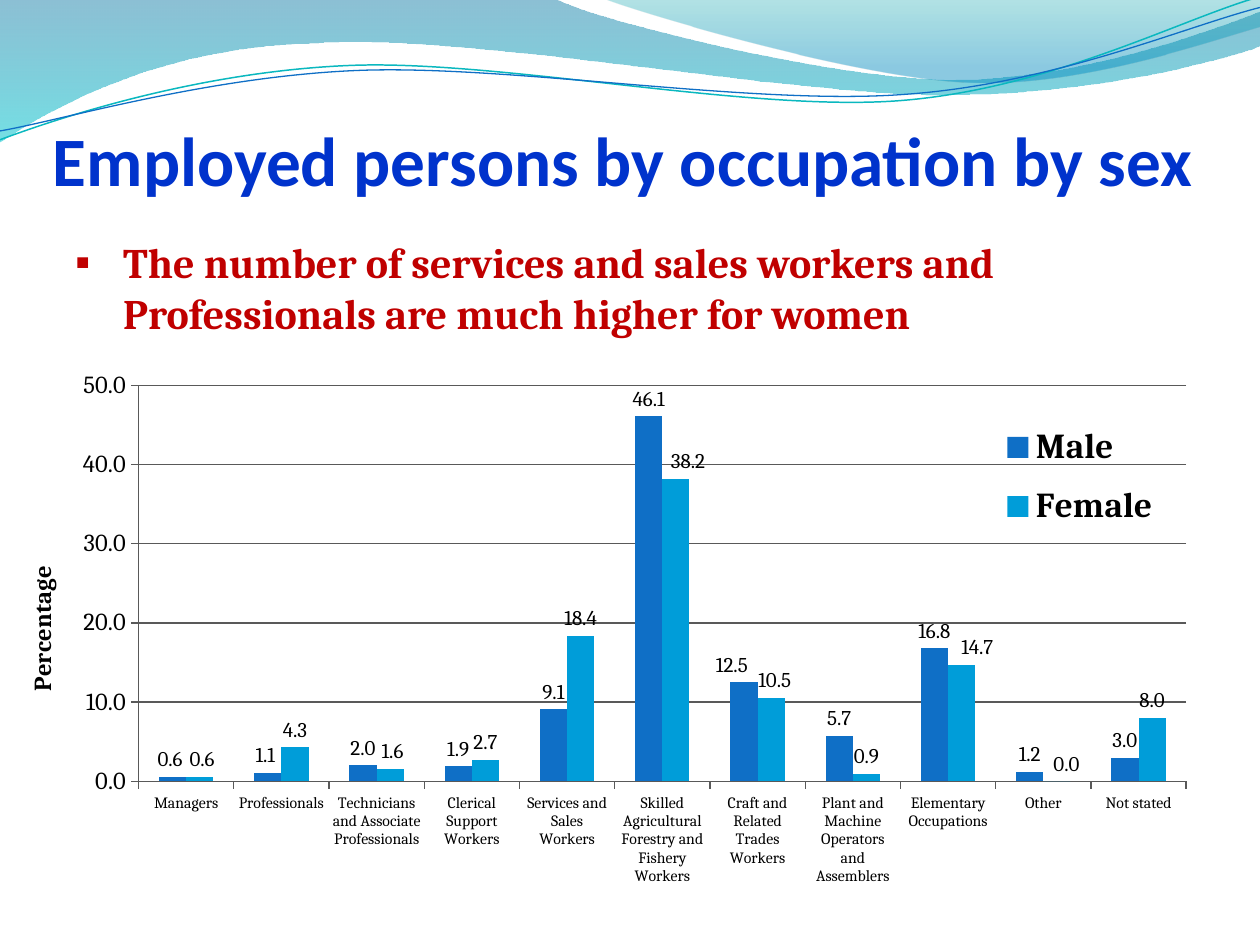
import math
from lxml import etree
from pptx import Presentation, util as u
from pptx.chart.data import CategoryChartData
from pptx.dml.color import RGBColor
from pptx.enum import chart as ch, text as tx
from pptx.oxml import ns

WAVES = [
    dict(start=(0, 0), segs=[
        (4.4, -0.01), (4.76, 0.17, 6.64, 0.63, 7.58, 0.63),
        (8.53, 0.63, 9.58, 0.26, 10, 0.09), (10.01, 0.36),
        (9.83, 0.44, 8.7, 0.76, 7.46, 0.75), (6.22, 0.75, 3.82, 0.28, 2.57, 0.34),
        (1.29, 0.36, 0.46, 0.83, -0.01, 1.13)],
        fill=[(0, "0074A1", 45), (1, "00C6CF", 55)]),
    dict(start=(4.79, -0.01), segs=[
        (5.09, 0.11, 6.82, 0.62, 7.69, 0.65), (8.56, 0.69, 9.61, 0.32, 10, 0.21),
        (10, 0)],
        fill=[(0, "00A1A9", 30), (0.8, "008BBF", 45)]),
    dict(start=(0, 1.11), segs=[
        (0.48, 0.93, 1.58, 0.57, 2.77, 0.52), (3.95, 0.47, 5.93, 0.89, 7.13, 0.8),
        (8.33, 0.71, 9.38, 0.15, 9.98, -0.02)],
        line=("0AB8BF", 0.85), turn=-2.7),
    dict(start=(0, 1.04), segs=[
        (0.47, 0.96, 1.64, 0.61, 2.83, 0.56), (4.03, 0.51, 5.97, 0.84, 7.17, 0.75),
        (8.36, 0.67, 9.41, 0.21, 10, 0.06)],
        line=("0F6FC6", 0.75), turn=-2.7),
]
TITLE = "Employed persons by occupation by sex"
POINT = "The number of services and sales workers and Professionals are much higher for women"
ROWS = [
    ("Managers", 0.6, 0.6),
    ("Professionals", 1.1, 4.3),
    ("Technicians and Associate Professionals", 2.0, 1.6),
    ("Clerical Support Workers", 1.9, 2.7),
    ("Services and Sales Workers", 9.1, 18.4),
    ("Skilled Agricultural Forestry and Fishery Workers", 46.1, 38.2),
    ("Craft and Related Trades Workers", 12.5, 10.5),
    ("Plant and Machine Operators and Assemblers", 5.7, 0.9),
    ("Elementary Occupations", 16.8, 14.7),
    ("Other", 1.2, 0.0),
    ("Not stated", 3.0, 8.0),
]
SEXES = [
    ("Male", "0F6FC6", {0: -0.002, 1: -0.002, 6: -0.01}),
    ("Female", "009DD9", {0: 0.002, 2: 0.002, 5: 0.01, 6: 0.003, 8: 0.013, 9: 0.008}),
]


def rgb(code):
    return RGBColor.from_string(code)


def style(font, size, code="000000", bold=False, face="Cambria"):
    font.size, font.bold, font.name = u.Pt(size), bold, face
    font.color.rgb = rgb(code)


def spin(point, hub, angle):
    dx, dy = point[0] - hub[0], point[1] - hub[1]
    cos, sin = math.cos(math.radians(angle)), math.sin(math.radians(angle))
    x, y = hub[0] + dx * cos - dy * sin, hub[1] + dx * sin + dy * cos
    return u.Inches(x), u.Inches(y)


def add_wave(slide, start, segs, fill=None, line=None, turn=0):
    hub = [(start[k] + segs[-1][k - 2]) / 2 for k in (0, 1)]
    first = spin(start, hub, -turn)
    parts = [[spin(seg[i:i + 2], hub, -turn) for i in range(0, len(seg), 2)]
             for seg in segs]
    outline = slide.shapes.build_freeform(*first)
    outline.add_line_segments([part[-1] for part in parts], close=bool(fill))
    wave = outline.convert_to_shape()
    steps = list(wave._element.iter(ns.qn("a:lnTo")))
    for step, part in zip(steps, parts):
        if len(part) == 1:
            continue
        curve = etree.Element(ns.qn("a:cubicBezTo"))
        for x, y in part:
            etree.SubElement(curve, ns.qn("a:pt"), x=str(x - wave.left), y=str(y - wave.top))
        step.getparent().replace(step, curve)
    wave.rotation = turn
    wave.shadow.inherit = False
    if line:
        wave.fill.background()
        wave.line.color.rgb = rgb(line[0])
        wave.line.width = u.Pt(line[1])
        return
    wave.line.fill.background()
    wave.fill.gradient()
    wave.fill.gradient_angle = 270
    for stop, (pos, code, _) in zip(wave.fill.gradient_stops, fill):
        stop.position = pos
        stop.color.rgb = rgb(code)
    for tone, (_, _, alpha) in zip(wave._element.spPr.iter(ns.qn("a:srgbClr")), fill):
        etree.SubElement(tone, ns.qn("a:alpha")).set("val", str(alpha * 1000))


def add_text(slide, box, words, *look):
    shape = slide.shapes.add_textbox(*map(u.Inches, box))
    frame = shape.text_frame
    frame.word_wrap = True
    para = frame.paragraphs[0]
    run = para.add_run()
    run.text = words
    style(run.font, *look)
    return frame, para


def lay(node, index, **vals):
    for old in node.findall(ns.qn("c:layout")):
        node.remove(old)
    layout = etree.Element(ns.qn("c:layout"))
    manual = etree.SubElement(layout, ns.qn("c:manualLayout"))
    for key, val in vals.items():
        etree.SubElement(manual, ns.qn("c:" + key)).set("val", str(val))
    node.insert(index, layout)


def add_chart(slide):
    data = CategoryChartData(number_format="0.0")
    data.categories = [row[0] for row in ROWS]
    for i, (name, _, _) in enumerate(SEXES, 1):
        data.add_series(name, [row[i] for row in ROWS])
    box = map(u.Inches, (0.17, 2.92, 9.58, 4.33))
    chart = slide.shapes.add_chart(ch.XL_CHART_TYPE.COLUMN_CLUSTERED, *box, data).chart
    style(chart.font, 18)
    chart.has_title = False
    edge = dict(xMode="edge", yMode="edge")

    plot = chart.plots[0]
    plot.gap_width, plot.overlap, plot.vary_by_categories = 150, 0, False
    for series, (_, code, moves) in zip(plot.series, SEXES):
        series.format.fill.solid()
        series.format.fill.fore_color.rgb = rgb(code)
        series.invert_if_negative = False
        labels = series.data_labels
        labels.show_value = True
        labels.number_format, labels.number_format_is_linked = "0.0", False
        labels.position = ch.XL_LABEL_POSITION.OUTSIDE_END
        style(labels.font, 12)
        for i in moves:
            label = series.points[i].data_label
            label.position = ch.XL_LABEL_POSITION.OUTSIDE_END
            style(label.font, 12)
        for node in labels._element.findall(ns.qn("c:dLbl")):
            spot = int(node.find(ns.qn("c:idx")).get("val"))
            lay(node, 1, x=moves[spot], y=0)

    cat, val = chart.category_axis, chart.value_axis
    for axis, size in ((cat, 9), (val, 14)):
        style(axis.tick_labels.font, size)
        axis.major_tick_mark = ch.XL_TICK_MARK.OUTSIDE
        axis.format.line.color.rgb = rgb("595959")
    val.minimum_scale, val.maximum_scale, val.major_unit = 0, 50, 10
    val.tick_labels.number_format = "0.0"
    val.tick_labels.number_format_is_linked = False
    val.has_major_gridlines = True
    val.major_gridlines.format.line.color.rgb = rgb("595959")
    run = val.axis_title.text_frame.paragraphs[0].add_run()
    run.text = "Percentage"
    style(run.font, 14, "000000", True)
    lay(val.axis_title._element, 1, **edge, x=0, y=0.355)

    chart.has_legend = True
    key = chart.legend
    key.position = ch.XL_LEGEND_POSITION.BOTTOM
    key.include_in_layout = False
    style(key.font, 20, "000000", True)
    lay(key._element, 1, **edge, x=0.807, y=0.075, w=0.14, h=0.25)
    key._element.find(ns.qn("c:overlay")).set("val", "1")
    lay(chart._chartSpace.chart.plotArea, 0, layoutTarget="inner", **edge,
        x=0.097, y=0.032, w=0.868, h=0.726)


def main():
    deck = Presentation()
    deck.slide_width, deck.slide_height = u.Inches(10), u.Inches(7.5)
    slide = deck.slides.add_slide(deck.slide_layouts[6])
    for wave in WAVES:
        add_wave(slide, **wave)
    add_chart(slide)

    frame, _ = add_text(slide, (0.42, 0.42, 9.42, 1.17), TITLE, 39.6, "0033CC", True, "Calibri")
    frame.vertical_anchor = tx.MSO_ANCHOR.BOTTOM
    frame.margin_left = frame.margin_right = 0

    _, para = add_text(slide, (0.5, 1.83, 9.33, 0.91), POINT, 24, "C00000", True)
    props = para._p.get_or_add_pPr()
    props.set("marL", str(u.Inches(0.38)))
    props.set("indent", str(u.Inches(-0.38)))
    etree.SubElement(props, ns.qn("a:buFont")).set("typeface", "Calibri")
    etree.SubElement(props, ns.qn("a:buChar")).set("char", "▪")
    frame.margin_bottom = 0
    deck.save("out.pptx")


if __name__ == "__main__":
    main()
